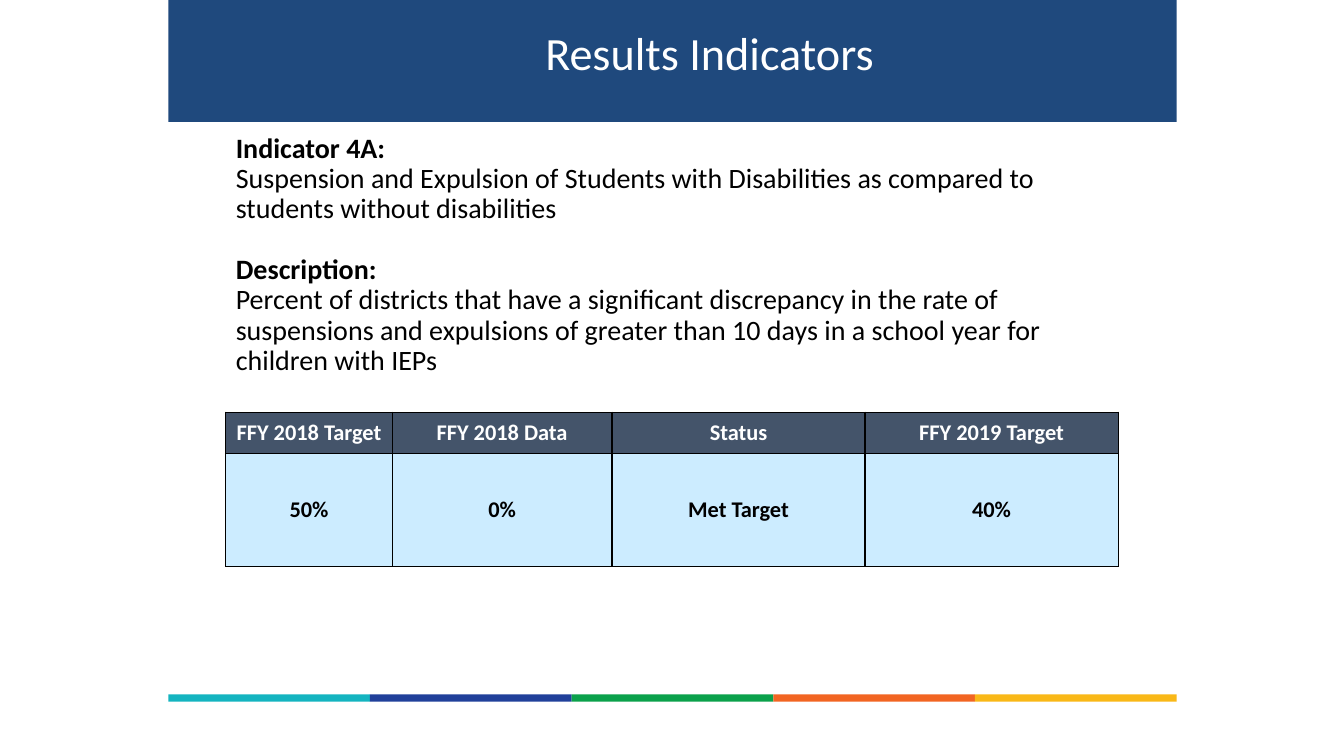
from lxml import etree
from pptx import Presentation
from pptx.dml.color import RGBColor
from pptx.enum.shapes import MSO_SHAPE
from pptx.enum.text import MSO_ANCHOR, MSO_AUTO_SIZE, PP_ALIGN
from pptx.oxml import parse_xml
from pptx.oxml.ns import nsdecls
from pptx.util import Inches, Pt

RECTANGLE = MSO_SHAPE.RECTANGLE
MIDDLE = MSO_ANCHOR.MIDDLE
NO_FIT = MSO_AUTO_SIZE.NONE
CENTER = PP_ALIGN.CENTER

BLACK, WHITE, NAVY = "000000", "FFFFFF", "1F497D"
HEADER_FILL, VALUE_FILL = "44546A", "CCECFF"
STRIPE_COLORS = ["14B4C0", "20409A", "0BA14B", "F26522", "F9B817"]
LEFT, WIDTH = 1.67, 10

BODY = [
    ("Indicator 4A:", True, 0),
    ("Suspension and Expulsion of Students with Disabilities as compared to "
     "students without disabilities", False, 0),
    ("Description:", True, 22),
    ("Percent of districts that have a significant discrepancy in the rate of "
     "suspensions and expulsions of greater than 10 days in a school year for "
     "children with IEPs", False, 0),
]
COLUMNS = [
    ("FFY 2018 Target", "50%", 1.65),
    ("FFY 2018 Data", "0%", 2.18),
    ("Status", "Met Target", 2.51),
    ("FFY 2019 Target", "40%", 2.51),
]
ROWS = [(0.41, HEADER_FILL, WHITE), (1.12, VALUE_FILL, BLACK)]


def write(para, text, color, **formats):
    span = para.add_run()
    span.text = text
    span.font.color.rgb = RGBColor.from_string(color)
    for name, value in ({"name": "Calibri"} | formats).items():
        setattr(span.font, name, value)


def add_bar(left, top, width, height, color):
    bar = page.shapes.add_shape(
        RECTANGLE, Inches(left), Inches(top), Inches(width), Inches(height))
    bar.shadow.inherit = False
    bar.fill.solid()
    bar.fill.fore_color.rgb = RGBColor.from_string(color)
    bar.line.fill.background()
    return bar


deck = Presentation()
deck.slide_width, deck.slide_height = Inches(13.33), Inches(7.5)
page = deck.slides.add_slide(deck.slide_layouts[5])

# Banner, placed behind the title
banner = add_bar(LEFT, -0.07, WIDTH, 1.28, NAVY)
title = page.shapes.title
title.element.addprevious(banner.element)
title.left, title.top = Inches(3.2), Inches(0.07)
title.width, title.height = Inches(7.78), Inches(0.96)
title.text_frame.auto_size = NO_FIT
title.text_frame.vertical_anchor = MIDDLE
heading = title.text_frame.paragraphs[0]
heading.alignment = CENTER
heading.line_spacing = 0.9
write(heading, "Results Indicators ", WHITE, size=Pt(33))

# Footer stripe
stripe_width = WIDTH / len(STRIPE_COLORS)
for index, color in enumerate(STRIPE_COLORS):
    add_bar(LEFT + index * stripe_width, 6.89, stripe_width, 0.07, color)

# Indicator text
box = page.shapes.add_textbox(Inches(2.24), Inches(1.28), Inches(8.85), Inches(2.7))
frame = box.text_frame
frame.word_wrap = True
for index, (text, bold, gap) in enumerate(BODY):
    para = frame.add_paragraph() if index else frame.paragraphs[0]
    para.line_spacing = 0.9
    para.space_before = Pt(gap)
    write(para, text, BLACK, size=Pt(20), bold=bold)

# Target table
table = page.shapes.add_table(
    len(ROWS), len(COLUMNS), Inches(2.24), Inches(4.09), Inches(8.85), Inches(1.53)).table
for row_index, (height, fill, color) in enumerate(ROWS):
    table.rows[row_index].height = Inches(height)
    for column_index, column in enumerate(COLUMNS):
        table.columns[column_index].width = Inches(column[2])
        cell = table.cell(row_index, column_index)
        cell.vertical_anchor = MIDDLE
        para = cell.text_frame.paragraphs[0]
        para.alignment = CENTER
        write(para, column[row_index], color, size=Pt(16), bold=True)
        properties = cell._tc.get_or_add_tcPr()
        for side in ("lnL", "lnR", "lnT", "lnB"):
            border = parse_xml(f'<a:{side} {nsdecls("a")} w="{Pt(1)}"/>')
            solid = etree.SubElement(border, border.tag.replace(side, "solidFill"))
            etree.SubElement(solid, border.tag.replace(side, "srgbClr"), val=BLACK)
            properties.append(border)
        cell.fill.solid()
        cell.fill.fore_color.rgb = RGBColor.from_string(fill)

deck.save("out.pptx")
